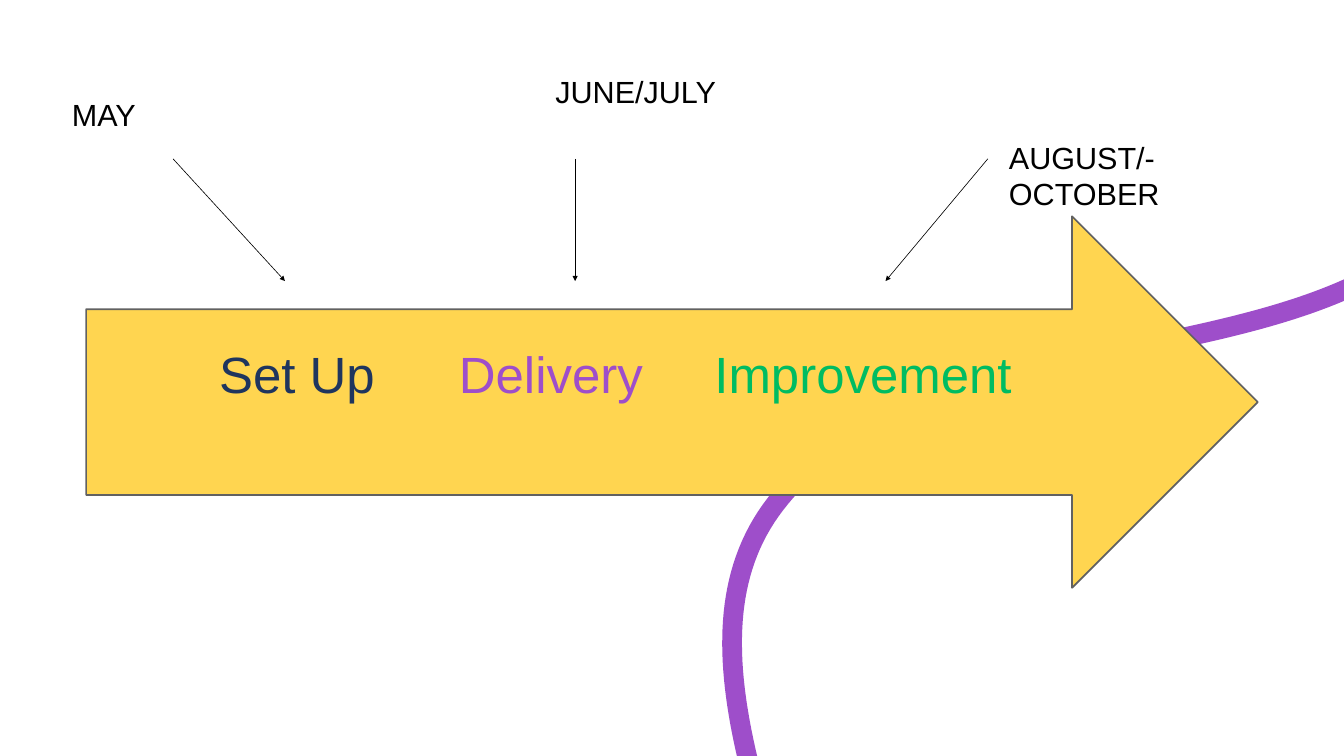
from lxml import etree
from pptx import Presentation
from pptx.dml.color import RGBColor
from pptx.enum import shapes, text
from pptx.oxml import ns
from pptx.util import Cm, Pt

SLIDE_WIDTH, SLIDE_HEIGHT = 55.85, 31.42
BLACK, PURPLE, YELLOW, GREY = "000000", "9E4ECA", "FFD550", "616161"
PHASES = [("Set Up", "1F355E", 5.28), ("Delivery", PURPLE, 15.24),
          ("Improvement", "00BC62", 25.86)]
LABELS = [("MAY", 2.74, 3.86, 4.65, 1.8),
          ("JUNE/JULY", 22.83, 2.92, 8.05, 1.8),
          ("AUGUST/-OCTOBER", 41.68, 5.64, 7.62, 3.33)]
POINTERS = [(7.19, 11.84), (23.9, 23.9), (41.05, 36.8)]
POINTER_TOP, POINTER_BOTTOM = 6.6, 11.68
CURVES = [((58.57, 10.52), (51.69, 15.62), (37.41, 13.69), (32.03, 21.21)),
          ((32.03, 21.21), (26.82, 28.5), (35.92, 40.69), (36.14, 51.74))]
CURVE_STEPS = 80
CURVE_OVERHANG = 0.8


def color(value):
    return RGBColor.from_string(value)


def set_format(target, values):
    for name, value in values.items():
        setattr(target, name, value)


def set_line(shape, line_color, width):
    shape.line.color.rgb = color(line_color)
    shape.line.width = Pt(width)


def format_run(run, size, run_color):
    set_format(run.font, {"name": "Arial", "size": Pt(size)})
    run.font.color.rgb = color(run_color)


def bezier_point(curve, t):
    weights = ((1 - t) ** 3, 3 * t * (1 - t) ** 2, 3 * t * t * (1 - t), t ** 3)
    return tuple(sum(w * p[axis] for w, p in zip(weights, curve)) for axis in (0, 1))


def add_ribbon(slide):
    """Draw the sweeping curve, ending just past the slide edges."""
    samples = [bezier_point(curve, step / CURVE_STEPS)
               for curve in CURVES for step in range(CURVE_STEPS)]
    points = [(Cm(x), Cm(y)) for x, y in samples
              if x < SLIDE_WIDTH + CURVE_OVERHANG and y < SLIDE_HEIGHT + CURVE_OVERHANG]
    builder = slide.shapes.build_freeform(*points[0])
    builder.add_line_segments(points[1:], close=False)
    ribbon = builder.convert_to_shape()
    ribbon.shadow.inherit = False
    ribbon.fill.background()
    set_line(ribbon, PURPLE, 23.25)


def add_tab_stops(paragraph, positions):
    properties = paragraph._p.get_or_add_pPr()
    tab_list = etree.SubElement(properties, ns.qn("a:tabLst"))
    for position in positions:
        etree.SubElement(tab_list, ns.qn("a:tab"), pos=str(Cm(position)), algn="l")


def add_phase_arrow(slide):
    arrow = slide.shapes.add_shape(shapes.MSO_SHAPE.RIGHT_ARROW,
                                   Cm(3.58), Cm(8.99), Cm(48.69), Cm(15.44))
    arrow.shadow.inherit = False
    arrow.fill.solid()
    arrow.fill.fore_color.rgb = color(YELLOW)
    set_line(arrow, GREY, 2)
    set_format(arrow.text_frame, {"vertical_anchor": text.MSO_ANCHOR.MIDDLE,
                                  "margin_bottom": Cm(2.56), "word_wrap": True})
    paragraph = arrow.text_frame.paragraphs[0]
    paragraph.alignment = text.PP_ALIGN.LEFT
    add_tab_stops(paragraph, [position for _, _, position in PHASES])
    for phase, phase_color, _ in PHASES:
        run = paragraph.add_run()
        run.text = "\t" + phase
        format_run(run, 60, phase_color)


def add_pointer(slide, start_x, end_x):
    pointer = slide.shapes.add_connector(
        shapes.MSO_CONNECTOR.STRAIGHT,
        Cm(start_x), Cm(POINTER_TOP), Cm(end_x), Cm(POINTER_BOTTOM))
    set_line(pointer, BLACK, 0.75)
    etree.SubElement(pointer.line._get_or_add_ln(), ns.qn("a:tailEnd"), type="triangle")
    etree.SubElement(pointer._element.spPr, ns.qn("a:effectLst"))


def add_label(slide, words, *box):
    label = slide.shapes.add_textbox(*map(Cm, box))
    set_format(label.text_frame, {"word_wrap": True,
                                  "auto_size": text.MSO_AUTO_SIZE.SHAPE_TO_FIT_TEXT})
    run = label.text_frame.paragraphs[0].add_run()
    run.text = words
    format_run(run, 36, BLACK)


def main():
    presentation = Presentation()
    set_format(presentation, {"slide_width": Cm(SLIDE_WIDTH),
                              "slide_height": Cm(SLIDE_HEIGHT)})
    slide = presentation.slides.add_slide(presentation.slide_layouts[6])
    add_ribbon(slide)
    add_phase_arrow(slide)
    for pointer in POINTERS:
        add_pointer(slide, *pointer)
    for label in LABELS:
        add_label(slide, *label)
    presentation.save("out.pptx")


if __name__ == "__main__":
    main()
